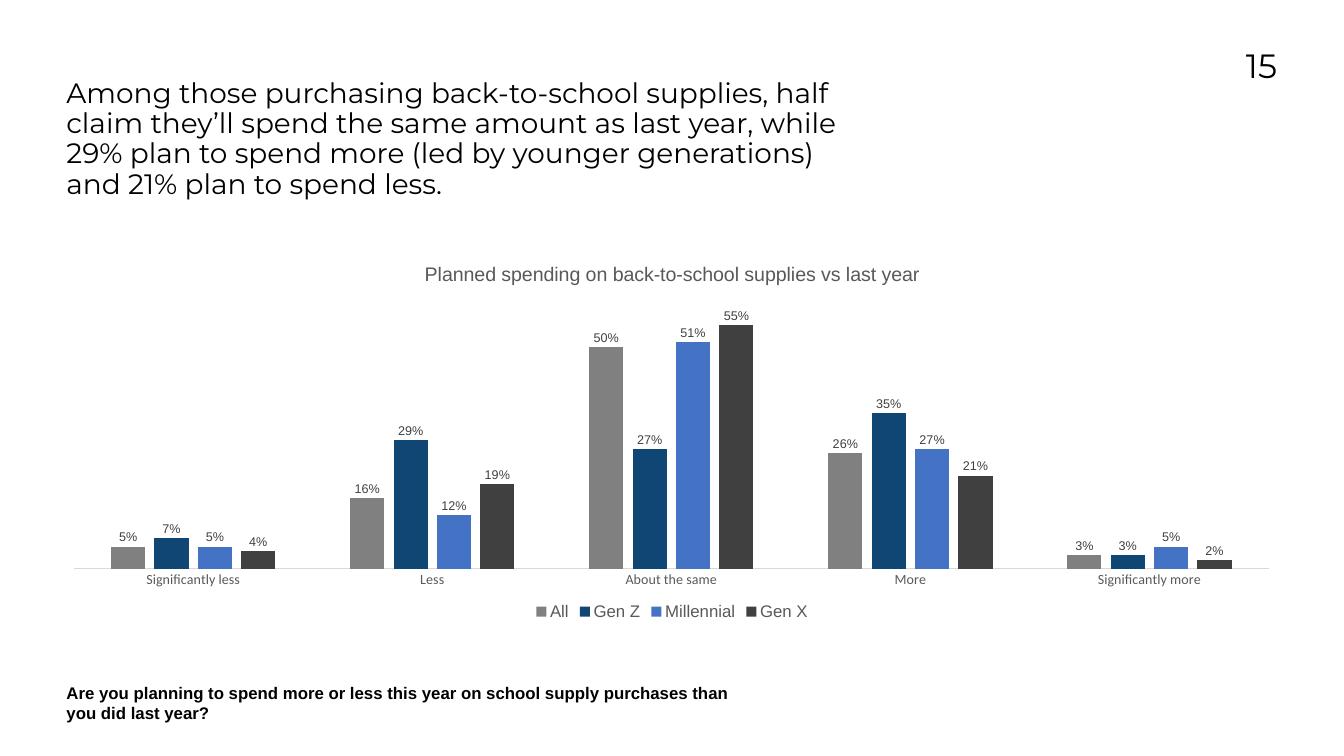
"""Build a slide comparing planned back-to-school spending across generations."""
from dataclasses import dataclass

from lxml import etree
from pptx import Presentation
from pptx import util as u
from pptx.chart import data as chart_data
from pptx.dml.color import RGBColor
from pptx.enum import chart as ch, text
from pptx.oxml import ns


@dataclass(frozen=True)
class Theme:
    ink: str = "000000"
    muted: str = "595959"
    label: str = "404040"
    axis: str = "D9D9D9"
    display: str = "Montserrat"
    body: str = "Arial"
    base: str = "Calibri"
    number_size: int = 48
    headline_size: int = 40
    chart_title_size: int = 28
    note_size: int = 24
    category_size: int = 20
    label_size: int = 18
    base_size: int = 10


@dataclass(frozen=True)
class Area:
    left: float
    top: float
    width: float
    height: float

    def lengths(self) -> list[u.Length]:
        return [u.Cm(n) for n in (self.left, self.top, self.width, self.height)]


@dataclass(frozen=True)
class TextBlock:
    words: str
    area: Area
    font: str
    size: int
    bold: bool = False
    align: text.PP_ALIGN = text.PP_ALIGN.LEFT
    line_spacing: float = 1.0


@dataclass(frozen=True)
class Generation:
    name: str
    color: str
    percents: tuple[int, ...]


THEME = Theme()
MARGIN = 3.35
CHART_AREA = Area(MARGIN, 12.52, 61.04, 18.95)
CHART_TITLE = "Planned spending on back-to-school supplies vs last year"
ANSWERS = ("Significantly less", "Less", "About the same", "More", "Significantly more")
GENERATIONS = (
    Generation("All", "808080", (5, 16, 50, 26, 3)),
    Generation("Gen Z", "104674", (7, 29, 27, 35, 3)),
    Generation("Millennial", "4472C4", (5, 12, 51, 27, 5)),
    Generation("Gen X", "404040", (4, 19, 55, 21, 2)),
)
PLOT_LAYOUT = {
    "layoutTarget": "inner", "xMode": "edge", "yMode": "edge",
    "x": 0.006, "y": 0.144, "w": 0.987, "h": 0.708,
}
TEXT_BLOCKS = (
    TextBlock(
        "Among those purchasing back-to-school supplies, half claim they’ll spend the same "
        "amount as last year, while 29% plan to spend more (led by younger generations) "
        "and 21% plan to spend less.",
        Area(MARGIN, 3.99, 40.03, 5.28), THEME.display, THEME.headline_size, line_spacing=0.9,
    ),
    TextBlock(
        "Are you planning to spend more or less this year on school supply purchases than "
        "you did last year?",
        Area(MARGIN, 34.42, 33.71, 1.65), THEME.body, THEME.note_size, bold=True,
    ),
    TextBlock(
        "15", Area(58.65, 2.24, 5.72, 4.17), THEME.display, THEME.number_size,
        align=text.PP_ALIGN.RIGHT,
    ),
)


def set_values(target, values: dict) -> None:
    for name, value in values.items():
        setattr(target, name, value)


def style_font(font, name: str, size: int, color: str, bold: bool = False) -> None:
    set_values(font, {"name": name, "size": u.Pt(size), "bold": bold})
    font.color.rgb = RGBColor.from_string(color)


def add_text(page, block: TextBlock) -> None:
    frame = page.shapes.add_textbox(*block.area.lengths()).text_frame
    margins = dict.fromkeys(("margin_left", "margin_top", "margin_right", "margin_bottom"), 0)
    set_values(frame, {"word_wrap": True, **margins})
    para = frame.paragraphs[0]
    set_values(para, {"alignment": block.align, "line_spacing": block.line_spacing})
    span = para.add_run()
    span.text = block.words
    style_font(span.font, block.font, block.size, THEME.ink, block.bold)


def place_plot(chart) -> None:
    plot_area = chart.plots[0]._element.getparent()
    for old in plot_area.findall(ns.qn("c:layout")):
        plot_area.remove(old)
    layout = etree.Element(ns.qn("c:layout"))
    manual = etree.SubElement(layout, ns.qn("c:manualLayout"))
    for name, value in PLOT_LAYOUT.items():
        etree.SubElement(manual, ns.qn(f"c:{name}")).set("val", str(value))
    plot_area.insert(0, layout)


def style_axes(chart) -> None:
    answers = chart.category_axis
    set_values(answers, {
        "major_tick_mark": ch.XL_TICK_MARK.NONE,
        "minor_tick_mark": ch.XL_TICK_MARK.NONE,
        "has_major_gridlines": False,
    })
    style_font(answers.tick_labels.font, THEME.base, THEME.category_size, THEME.muted)
    answers.format.line.width = u.Pt(0.75)
    answers.format.line.color.rgb = RGBColor.from_string(THEME.axis)
    set_values(chart.value_axis, {
        "minimum_scale": 0, "maximum_scale": 0.6,
        "has_major_gridlines": False, "visible": False,
    })


def style_series(series, generation: Generation) -> None:
    series.format.fill.solid()
    series.format.fill.fore_color.rgb = RGBColor.from_string(generation.color)
    labels = series.data_labels
    set_values(labels, {
        "show_value": True, "number_format": "0%", "number_format_is_linked": False,
        "position": ch.XL_LABEL_POSITION.OUTSIDE_END,
    })
    style_font(labels.font, THEME.body, THEME.label_size, THEME.label)


def add_spending_chart(page) -> None:
    values = chart_data.CategoryChartData(number_format="0%")
    values.categories = ANSWERS
    for generation in GENERATIONS:
        values.add_series(generation.name, [n / 100 for n in generation.percents])
    chart = page.shapes.add_chart(
        ch.XL_CHART_TYPE.COLUMN_CLUSTERED, *CHART_AREA.lengths(), values
    ).chart
    style_font(chart.font, THEME.base, THEME.base_size, THEME.ink)
    set_values(chart, {"has_title": True, "has_legend": True})
    para = chart.chart_title.text_frame.paragraphs[0]
    span = para.add_run()
    span.text = CHART_TITLE
    style_font(span.font, THEME.body, THEME.chart_title_size, THEME.muted)
    set_values(chart.legend, {
        "position": ch.XL_LEGEND_POSITION.BOTTOM, "include_in_layout": False,
    })
    style_font(chart.legend.font, THEME.body, THEME.note_size, THEME.muted)
    plot = chart.plots[0]
    set_values(plot, {"gap_width": 219, "overlap": -27, "vary_by_categories": False})
    for series, generation in zip(plot.series, GENERATIONS):
        style_series(series, generation)
    style_axes(chart)
    place_plot(chart)


def main() -> None:
    deck = Presentation()
    set_values(deck, {"slide_width": u.Cm(67.74), "slide_height": u.Cm(38.1)})
    page = deck.slides.add_slide(deck.slide_layouts[6])
    add_spending_chart(page)
    for block in TEXT_BLOCKS:
        add_text(page, block)
    deck.save("out.pptx")


if __name__ == "__main__":
    main()
